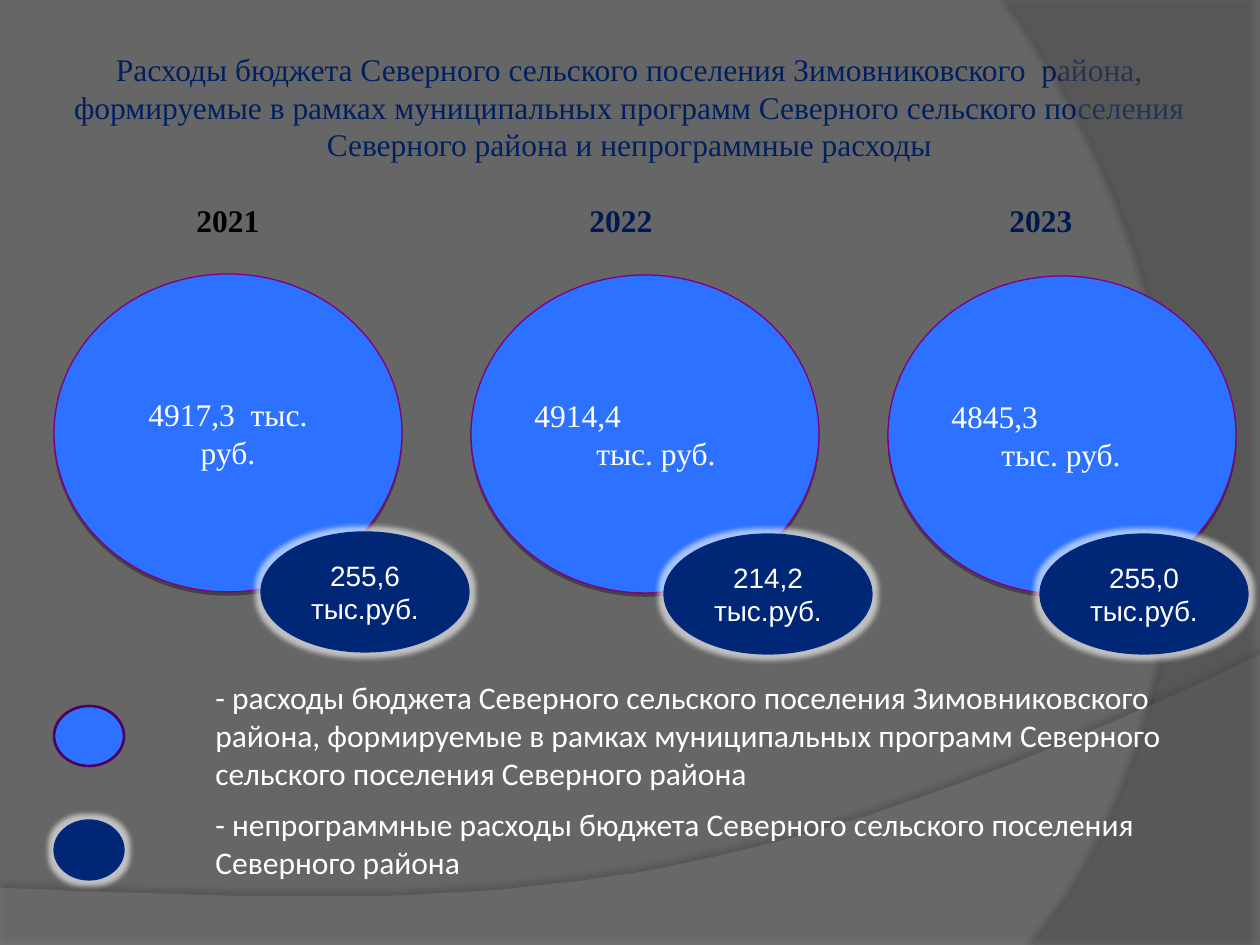
import dataclasses

import lxml.etree
import pptx
import pptx.dml.color
import pptx.enum.shapes
import pptx.enum.text
import pptx.oxml.ns
import pptx.util

SCALE = 914400 / 126
ANCHOR = pptx.enum.text.MSO_ANCHOR
ALIGN = pptx.enum.text.PP_ALIGN
AUTO_SIZE = pptx.enum.text.MSO_AUTO_SIZE


@dataclasses.dataclass(frozen=True)
class Theme:
    background: str = "666666"
    lower_wave: str = "7F7F7F"
    right_wave: str = "5E5E5E"
    program: str = "2C71FF"
    program_line: str = "800080"
    legend_line: str = "4D005E"
    other: str = "002776"
    other_line: str = "002A7F"
    title: str = "002060"
    first_year: str = "000000"
    year: str = "001A4F"
    light: str = "FFFFFF"
    shadow: str = "000000"
    serif: str = "Times New Roman"
    sans: str = "Arial"
    legend: str = "Calibri"
    body_size: int = 18
    small_size: int = 16


THEME = Theme()


def px(length):
    return pptx.util.Emu(round(length * SCALE))


def rgb(value):
    return pptx.dml.color.RGBColor.from_string(value)


def set_format(target, values):
    for name, value in values.items():
        setattr(target, name, value)


def place(shape, box):
    set_format(shape, dict(zip(("left", "top", "width", "height"), map(px, box))))


def add_node(parent, tag, **attributes):
    node = lxml.etree.SubElement(parent, pptx.oxml.ns.qn(tag))
    for name, value in attributes.items():
        node.set(name, str(value))
    return node


def add_effect(shape, tag, color, opacity, **attributes):
    shape.shadow.inherit = False
    effects = shape._element.spPr.find(pptx.oxml.ns.qn("a:effectLst"))
    effect = add_node(effects, tag, **attributes)
    color_node = add_node(effect, "a:srgbClr", val=color)
    add_node(color_node, "a:alpha", val=opacity * 1000)


def add_shadow(shape, opacity, blur, distance, angle):
    add_effect(shape, "a:outerShdw", THEME.shadow, opacity,
               blurRad=pptx.util.Pt(blur), dist=pptx.util.Pt(distance),
               dir=angle * 60000, algn="ctr", rotWithShape=0)


def add_glow(shape):
    add_effect(shape, "a:glow", THEME.light, 60, rad=px(10))


def fill_text(shape, text, font, size, color, bold=False, align=ALIGN.LEFT, **frame_values):
    frame = shape.text_frame
    frame.text = text
    set_format(frame, {"word_wrap": True, **frame_values})
    paragraph = frame.paragraphs[0]
    paragraph.alignment = align
    for run in paragraph.runs:
        set_format(run.font, {"name": font, "size": pptx.util.Pt(size), "bold": bold})
        run.font.color.rgb = rgb(color)
    return paragraph


def add_label(slide, box, text, font, color, **values):
    shape = slide.shapes.add_textbox(*map(px, box))
    fill_text(shape, text, font, THEME.body_size, color, **values)


def add_ellipse(slide, box, fill, line, width=0.75):
    shape = slide.shapes.add_shape(pptx.enum.shapes.MSO_SHAPE.OVAL, *map(px, box))
    shape.shadow.inherit = False
    shape.fill.solid()
    shape.fill.fore_color.rgb = rgb(fill)
    shape.line.color.rgb = rgb(line)
    shape.line.width = pptx.util.Pt(width)
    return shape


def curve(points, steps=40):
    for step in range(steps + 1):
        t = step / steps
        weights = ((1 - t) ** 3, 3 * t * (1 - t) ** 2, 3 * t * t * (1 - t), t ** 3)
        yield tuple(sum(w * p[axis] for w, p in zip(weights, points)) for axis in (0, 1))


def add_wave(slide, corners, bend, color, opacity, shadow):
    builder = slide.shapes.build_freeform(*corners[0], scale=SCALE)
    builder.add_line_segments(corners[1:] + list(curve(bend)), close=True)
    shape = builder.convert_to_shape()
    shape.fill.solid()
    shape.fill.fore_color.rgb = rgb(color)
    color_node = shape._element.spPr.find(".//" + pptx.oxml.ns.qn("a:srgbClr"))
    add_node(color_node, "a:alpha", val=opacity * 1000)
    shape.line.fill.background()
    add_shadow(shape, *shadow)


def add_title(slide, text):
    title = slide.shapes.title
    place(title, (44, 37, 1171, 139))
    margins = dict.fromkeys(
        ("margin_left", "margin_right", "margin_top", "margin_bottom"), px(6))
    fill_text(title, text, THEME.serif, THEME.body_size, THEME.title, align=ALIGN.CENTER,
              vertical_anchor=ANCHOR.MIDDLE, auto_size=AUTO_SIZE.NONE, **margins)


def add_program_amount(slide, left, top, text, hanging):
    shape = add_ellipse(slide, (left, top, 348, 318), THEME.program, THEME.program_line)
    add_shadow(shape, 35, 0, 1.8, 90)
    paragraph = fill_text(shape, text, THEME.serif, THEME.body_size, THEME.light,
                          align=ALIGN.LEFT if hanging else ALIGN.CENTER,
                          vertical_anchor=ANCHOR.MIDDLE)
    if hanging:
        properties = paragraph._p.get_or_add_pPr()
        properties.set("marL", str(px(hanging)))
        properties.set("indent", str(-px(hanging)))


def add_other_amount(slide, left, top, text):
    shape = add_ellipse(slide, (left, top, 208, 120), THEME.other, THEME.other_line)
    add_glow(shape)
    fill_text(shape, text, THEME.sans, THEME.small_size, THEME.light,
              align=ALIGN.CENTER, vertical_anchor=ANCHOR.MIDDLE)


def add_legend(slide):
    add_ellipse(slide, (54, 706, 70, 60), THEME.program, THEME.legend_line, 1.5)
    add_glow(add_ellipse(slide, (54, 820, 70, 60), THEME.other, THEME.other_line))
    entries = [
        ((203, 672, 1046, 127),
         "- расходы бюджета Северного сельского поселения Зимовниковского района, "
         "формируемые в рамках муниципальных программ Северного сельского поселения "
         "Северного района"),
        ((203, 799, 1002, 89),
         "- непрограммные расходы бюджета Северного сельского поселения Северного района"),
    ]
    for box, text in entries:
        add_label(slide, box, text, THEME.legend, THEME.light)


def main():
    presentation = pptx.Presentation()
    set_format(presentation, {"slide_width": px(1260), "slide_height": px(945)})
    slide = presentation.slides.add_slide(presentation.slide_layouts[5])
    slide.background.fill.solid()
    slide.background.fill.fore_color.rgb = rgb(THEME.background)

    add_wave(slide, [(0, 888), (0, 945), (1260, 945)],
             [(1260, 655), (704, 919), (493, 906), (0, 888)],
             THEME.lower_wave, 45, (35, 4, 3.5, 270))
    add_wave(slide, [(1260, 0), (1260, 945)],
             [(1034, 945), (1178, 780), (1283, 378), (1008, 0)],
             THEME.right_wave, 40, (45, 4, 4, 180))
    add_title(slide, "Расходы бюджета Северного сельского поселения Зимовниковского  района, "
                     "формируемые в рамках муниципальных программ Северного сельского "
                     "поселения Северного района и непрограммные расходы")

    years = [
        ("2021", 184, THEME.first_year, "4917,3  тыс. руб.", 0, "255,6 тыс.руб.", 261, 532),
        ("2022", 577, THEME.year, "4914,4\vтыс. руб.", 62, "214,2 тыс.руб.", 664, 534),
        ("2023", 997, THEME.year, "4845,3\vтыс. руб.", 50, "255,0 тыс.руб.", 1040, 534),
    ]
    for index, (year, year_left, color, amount, hanging, *_) in enumerate(years):
        add_label(slide, (year_left, 195, 89, 50), year, THEME.serif, color,
                  bold=True, word_wrap=False)
        add_program_amount(slide, 54 + 417 * index, 274 + index, amount, hanging)
    for *_, amount, left, top in years:
        add_other_amount(slide, left, top, amount)
    add_legend(slide)
    presentation.save("out.pptx")


if __name__ == "__main__":
    main()
